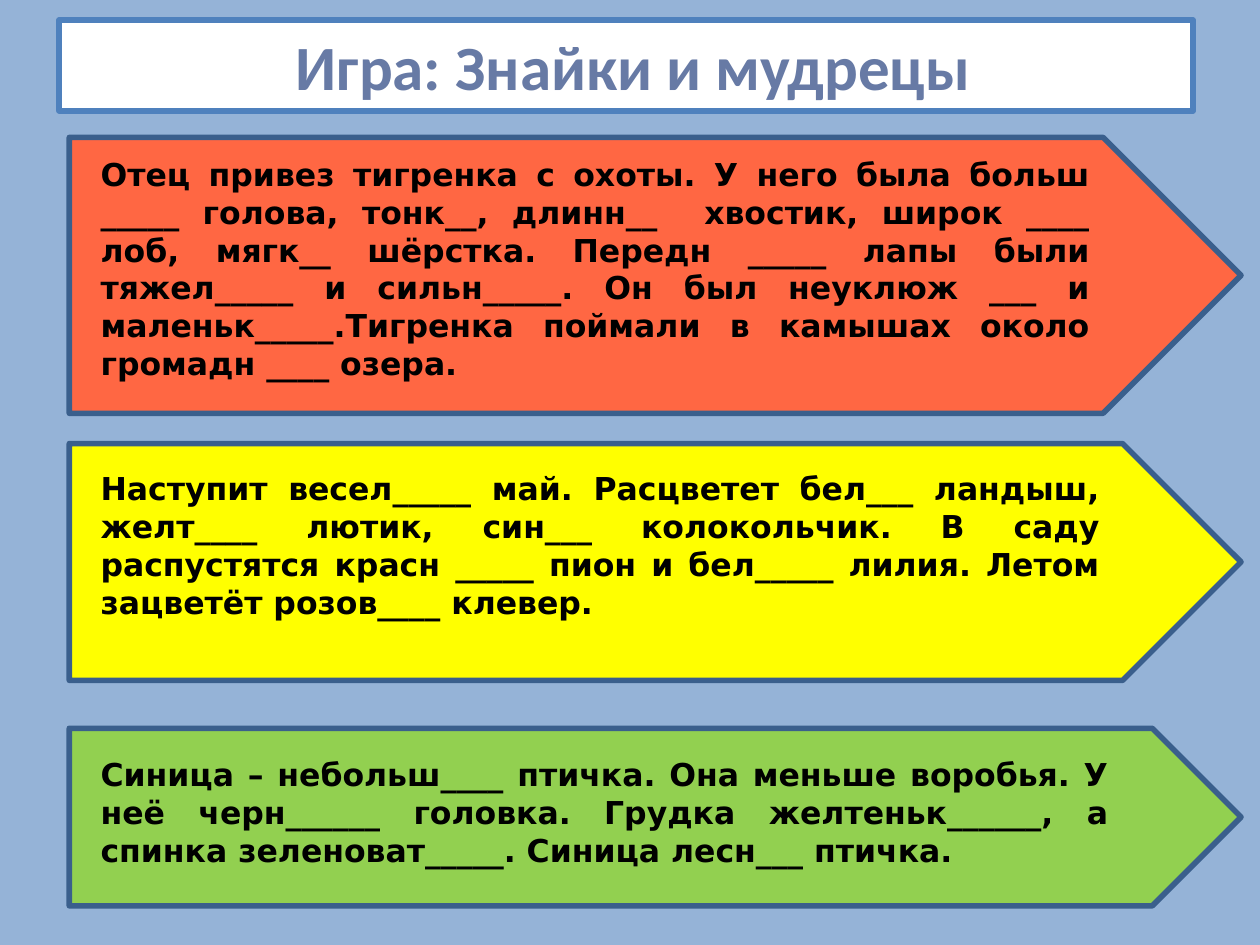
from pptx import Presentation
from pptx.dml.color import RGBColor
from pptx.enum.shapes import MSO_SHAPE as Shape
from pptx.enum.text import MSO_ANCHOR as Anchor, PP_ALIGN as Align
from pptx.util import Inches, Pt

SKY = RGBColor(0x95, 0xB3, 0xD7)
WHITE = RGBColor(0xFF, 0xFF, 0xFF)
BLACK = RGBColor(0x00, 0x00, 0x00)
TITLE_BLUE = RGBColor(0x67, 0x7A, 0xA5)
FRAME_BLUE = RGBColor(0x4F, 0x81, 0xBD)
ARROW_EDGE = RGBColor(0x3A, 0x5F, 0x8C)
CORAL = RGBColor(0xFF, 0x67, 0x43)
YELLOW = RGBColor(0xFF, 0xFF, 0x00)
GREEN = RGBColor(0x92, 0xD0, 0x50)

# Content
TITLE = " Игра: Знайки и мудрецы"
# Each task: fill, arrow (top, height), text (top, width, height), wording
TASKS = [
    (CORAL, (1.09, 2.19), (1.17, 8.05, 1.92),
     "Отец привез тигренка с охоты. У него была больш _____ голова, "
     "тонк__, длинн__  хвостик, широк ____ лоб, мягк__ шёрстка. "
     "Передн _____ лапы были тяжел_____ и сильн_____. Он был неуклюж ___ "
     "и маленьк_____.Тигренка поймали в камышах около громадн ____ озера."),
    (YELLOW, (3.52, 1.88), (3.67, 8.13, 1.31),
     "Наступит весел_____ май. Расцветет бел___ ландыш, желт____ лютик, "
     "син___ колокольчик. В саду распустятся красн _____ пион и бел_____ "
     "лилия. Летом зацветёт розов____ клевер."),
    (GREEN, (5.78, 1.41), (5.94, 8.2, 1.01),
     "Синица – небольш____ птичка. Она меньше воробья. У неё черн______ "
     "головка. Грудка желтеньк______, а спинка зеленоват_____. "
     "Синица лесн___ птичка."),
]

# Shared columns, in inches
ARROW_LEFT, ARROW_WIDTH = 0.55, 9.3
TEXT_LEFT = 0.7


def add_panel(slide, kind, box, fill, edge):
    panel = slide.shapes.add_shape(kind, *map(Inches, box))
    panel.shadow.inherit = False
    panel.fill.solid()
    panel.fill.fore_color.rgb = fill
    panel.line.color.rgb = edge
    panel.line.width = Pt(3.15)
    return panel


def write(frame, wording, align, font_name, size, color):
    frame.word_wrap = True
    frame.vertical_anchor = Anchor.MIDDLE
    paragraph = frame.paragraphs[0]
    paragraph.text = wording
    paragraph.alignment = align
    font = paragraph.font
    font.name, font.size, font.bold = font_name, Pt(size), True
    font.color.rgb = color


def main():
    deck = Presentation()
    deck.slide_width, deck.slide_height = Inches(10), Inches(7.5)
    slide = deck.slides.add_slide(deck.slide_layouts[6])
    slide.background.fill.solid()
    slide.background.fill.fore_color.rgb = SKY

    # Title bar
    title = add_panel(slide, Shape.RECTANGLE, (0.47, 0.16, 9, 0.72),
                      WHITE, FRAME_BLUE)
    write(title.text_frame, TITLE, Align.CENTER, "Calibri", 36, TITLE_BLUE)

    # Arrow and fill-in text of each task
    for fill, (top, height), (text_top, width, text_height), wording in TASKS:
        add_panel(slide, Shape.PENTAGON,
                  (ARROW_LEFT, top, ARROW_WIDTH, height), fill, ARROW_EDGE)
        exercise = slide.shapes.add_textbox(
            *map(Inches, (TEXT_LEFT, text_top, width, text_height)))
        write(exercise.text_frame, wording, Align.JUSTIFY,
              "DejaVu Sans", 18, BLACK)

    deck.save("out.pptx")


if __name__ == "__main__":
    main()
